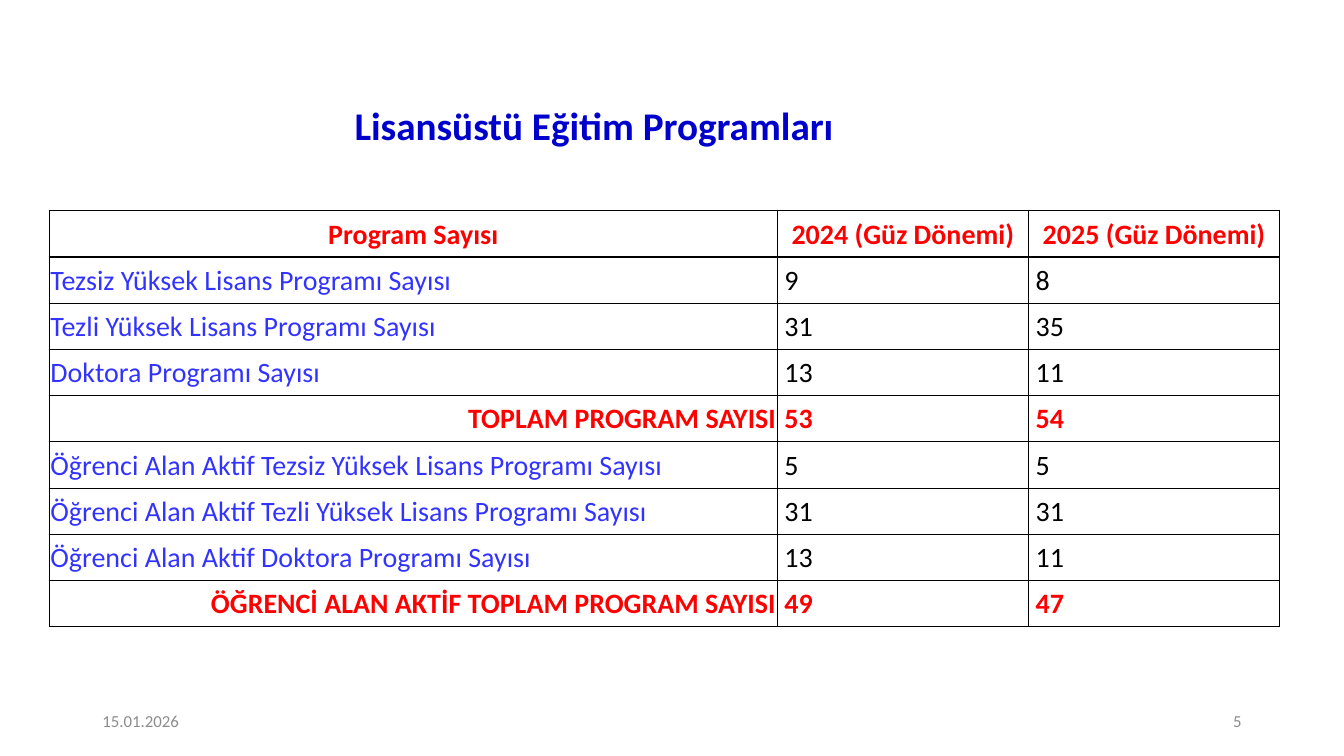
from pptx import Presentation
from pptx.dml.color import RGBColor
from pptx.enum.text import MSO_ANCHOR, MSO_AUTO_SIZE, PP_ALIGN
from pptx.oxml import parse_xml
from pptx.oxml.ns import nsdecls
from pptx.util import Cm, Pt

FONT = "Calibri"
COLOURS = {
    "title": "0000CC",
    "total": "FF0000",
    "label": "3333FF",
    "value": "000000",
    "border": "000000",
    "footer": "8C8C8C",
}
HEADER = ("Program Sayısı", "2024 (Güz Dönemi)", "2025 (Güz Dönemi)")
PROGRAMS = [
    ("Tezsiz Yüksek Lisans Programı Sayısı", 9, 8),
    ("Tezli Yüksek Lisans Programı Sayısı", 31, 35),
    ("Doktora Programı Sayısı", 13, 11),
    ("TOPLAM PROGRAM SAYISI", 53, 54),
    ("Öğrenci Alan Aktif Tezsiz Yüksek Lisans Programı Sayısı", 5, 5),
    ("Öğrenci Alan Aktif Tezli Yüksek Lisans Programı Sayısı", 31, 31),
    ("Öğrenci Alan Aktif Doktora Programı Sayısı", 13, 11),
    ("ÖĞRENCİ ALAN AKTİF TOPLAM PROGRAM SAYISI", 49, 47),
]
COLUMN_WIDTHS = (Cm(18.35), Cm(6.33), Cm(6.33))


def format_paragraph(paragraph, size, colour, bold=False, alignment=PP_ALIGN.LEFT):
    paragraph.alignment = alignment
    font = paragraph.font
    font.name = FONT
    font.size = Pt(size)
    font.bold = bold
    font.color.rgb = RGBColor.from_string(COLOURS[colour])


def set_title(slide, text):
    title = slide.shapes.title
    title.left, title.top = Cm(0.36), Cm(2.26)
    title.width, title.height = Cm(29.46), Cm(1.9)
    frame = title.text_frame
    frame.text = text
    frame.auto_size = MSO_AUTO_SIZE.NONE
    frame.vertical_anchor = MSO_ANCHOR.MIDDLE
    frame.margin_right = Cm(0.5)
    paragraph = frame.paragraphs[0]
    paragraph.line_spacing = 0.9
    format_paragraph(paragraph, 28, "title", True, PP_ALIGN.CENTER)


def add_footer_text(slide, left, text, alignment):
    frame = slide.shapes.add_textbox(left, Cm(17.65), Cm(7.62), Cm(1.02)).text_frame
    frame.text = text
    frame.word_wrap = True
    frame.vertical_anchor = MSO_ANCHOR.MIDDLE
    format_paragraph(frame.paragraphs[0], 12, "footer", alignment=alignment)


def add_cell_borders(cell):
    properties = cell._tc.get_or_add_tcPr()
    for side in ("lnL", "lnR", "lnT", "lnB"):
        properties.append(parse_xml(
            f'<a:{side} {nsdecls("a")} w="{Pt(1)}"><a:solidFill>'
            f'<a:srgbClr val="{COLOURS["border"]}"/></a:solidFill></a:{side}>'
        ))


def fill_cell(cell, text, colour, bold, alignment, margin_left):
    add_cell_borders(cell)
    cell.fill.background()
    cell.text = text
    cell.vertical_anchor = MSO_ANCHOR.MIDDLE
    cell.margin_left = margin_left
    cell.margin_right = cell.margin_top = Cm(0.03)
    cell.margin_bottom = 0
    format_paragraph(cell.text_frame.paragraphs[0], 20, colour, bold, alignment)


def add_program_table(slide):
    rows = [HEADER, *PROGRAMS]
    table = slide.shapes.add_table(
        len(rows), len(HEADER), Cm(1.24), Cm(5.31), sum(COLUMN_WIDTHS), Cm(10.49)
    ).table
    table.first_row = table.horz_banding = False
    for column, width in zip(table.columns, COLUMN_WIDTHS):
        column.width = width
    for row_index, row in enumerate(rows):
        is_header = row_index == 0
        is_total = "TOPLAM" in row[0]
        emphasised = is_header or is_total
        for column_index, content in enumerate(row):
            is_label = column_index == 0
            colour = "total" if emphasised else "label" if is_label else "value"
            alignment = PP_ALIGN.LEFT
            if is_header:
                alignment = PP_ALIGN.CENTER
            elif is_total and is_label:
                alignment = PP_ALIGN.RIGHT
            margin_left = Cm(0.03) if is_header or is_label else Cm(0.18)
            fill_cell(table.cell(row_index, column_index), str(content),
                      colour, emphasised, alignment, margin_left)


def main():
    presentation = Presentation()
    presentation.slide_width, presentation.slide_height = Cm(33.87), Cm(19.05)
    slide = presentation.slides.add_slide(presentation.slide_layouts[5])
    set_title(slide, "Lisansüstü Eğitim Programları")
    add_footer_text(slide, Cm(2.33), "15.01.2026", PP_ALIGN.LEFT)
    add_footer_text(slide, Cm(23.92), "5", PP_ALIGN.RIGHT)
    add_program_table(slide)
    presentation.save("out.pptx")


if __name__ == "__main__":
    main()
